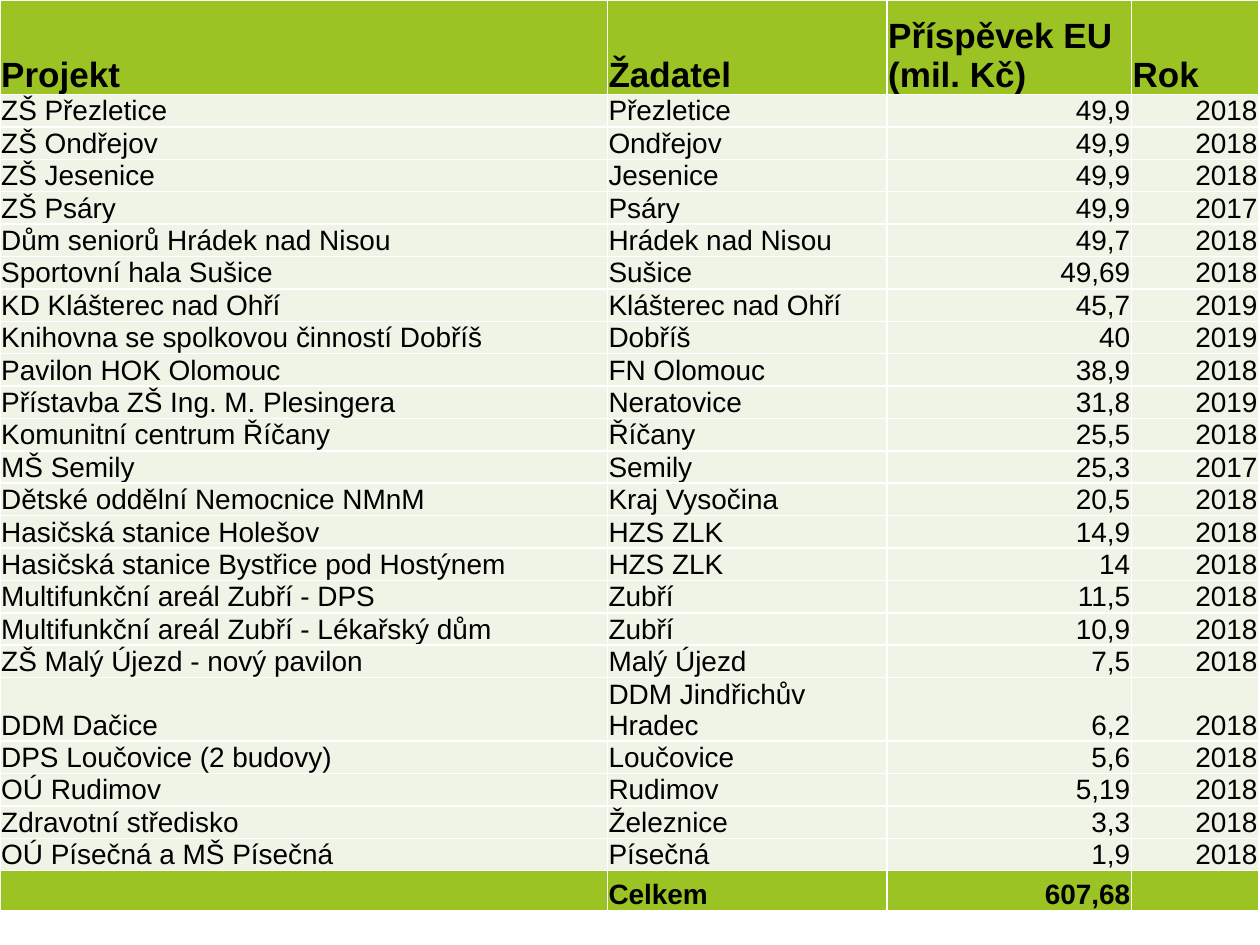
from dataclasses import dataclass

from lxml import etree
from pptx import Presentation
from pptx import util as u
from pptx.dml.color import RGBColor
from pptx.enum import text
from pptx.oxml import ns


@dataclass(frozen=True)
class Theme:
    font: str = "Arial"
    ink: str = "000000"
    green: str = "9BC323"
    pale: str = "EFF4E7"
    rule: str = "FFFFFF"
    head: int = 20
    body: int = 16
    line: int = 1
    inset: float = 0.01


THEME = Theme()
COLS = (0.482, 0.222, 0.194, 0.101)
HEAD, ROW, TOTAL = 0.1, 0.23 / 7.5, 0.22 / 7.5

ROWS = [
    ("Projekt", "Žadatel", "Příspěvek EU (mil. Kč)", "Rok"),
    ("ZŠ Přezletice", "Přezletice", "49,9", "2018"),
    ("ZŠ Ondřejov", "Ondřejov", "49,9", "2018"),
    ("ZŠ Jesenice", "Jesenice", "49,9", "2018"),
    ("ZŠ Psáry", "Psáry", "49,9", "2017"),
    ("Dům seniorů Hrádek nad Nisou", "Hrádek nad Nisou", "49,7", "2018"),
    ("Sportovní hala Sušice", "Sušice", "49,69", "2018"),
    ("KD Klášterec nad Ohří", "Klášterec nad Ohří", "45,7", "2019"),
    ("Knihovna se spolkovou činností Dobříš", "Dobříš", "40", "2019"),
    ("Pavilon HOK Olomouc", "FN Olomouc", "38,9", "2018"),
    ("Přístavba ZŠ Ing. M. Plesingera", "Neratovice", "31,8", "2019"),
    ("Komunitní centrum Říčany", "Říčany", "25,5", "2018"),
    ("MŠ Semily", "Semily", "25,3", "2017"),
    ("Dětské oddělní Nemocnice NMnM", "Kraj Vysočina", "20,5", "2018"),
    ("Hasičská stanice Holešov", "HZS ZLK", "14,9", "2018"),
    ("Hasičská stanice Bystřice pod Hostýnem", "HZS ZLK", "14", "2018"),
    ("Multifunkční areál Zubří - DPS", "Zubří", "11,5", "2018"),
    ("Multifunkční areál Zubří - Lékařský dům", "Zubří", "10,9", "2018"),
    ("ZŠ Malý Újezd - nový pavilon", "Malý Újezd", "7,5", "2018"),
    ("DDM Dačice", "DDM Jindřichův Hradec", "6,2", "2018"),
    ("DPS Loučovice (2 budovy)", "Loučovice", "5,6", "2018"),
    ("OÚ Rudimov", "Rudimov", "5,19", "2018"),
    ("Zdravotní středisko", "Železnice", "3,3", "2018"),
    ("OÚ Písečná a MŠ Písečná", "Písečná", "1,9", "2018"),
    ("", "Celkem", "607,68", ""),
]


def edge(cell):
    """Rule all four sides of a cell."""
    props = cell._tc.get_or_add_tcPr()
    for i, side in enumerate(("lnL", "lnR", "lnT", "lnB")):
        line = etree.Element(ns.qn(f"a:{side}"), w=str(u.Pt(THEME.line)))
        fill = etree.SubElement(line, ns.qn("a:solidFill"))
        etree.SubElement(fill, ns.qn("a:srgbClr"), val=THEME.rule)
        props.insert(i, line)


def style(cell, words, size, bold, fill, right):
    cell.fill.solid()
    cell.fill.fore_color.rgb = RGBColor.from_string(fill)
    edge(cell)
    cell.margin_left = cell.margin_right = cell.margin_top = u.Inches(THEME.inset)
    cell.margin_bottom = 0
    cell.vertical_anchor = text.MSO_ANCHOR.BOTTOM
    if not words:
        return
    cell.text_frame.text = words
    para = cell.text_frame.paragraphs[0]
    para.alignment = text.PP_ALIGN.RIGHT if right else text.PP_ALIGN.LEFT
    font = para.runs[0].font
    font.name, font.size, font.bold = THEME.font, u.Pt(size), bold
    font.color.rgb = RGBColor.from_string(THEME.ink)


def grants(slide, left, top, width, height):
    """Place the table of projects in the given box."""
    last = len(ROWS) - 1
    table = slide.shapes.add_table(
        len(ROWS), len(COLS), left, top, width, height).table
    table.first_row = table.horz_banding = False
    for col, share in zip(table.columns, COLS):
        col.width = int(width * share)
    for r, row in enumerate(ROWS):
        share = HEAD if r == 0 else TOTAL if r == last else ROW
        table.rows[r].height = int(height * share)
        strong = r in (0, last)
        for c, words in enumerate(row):
            style(table.cell(r, c), words,
                  size=THEME.body if r else THEME.head,
                  bold=strong,
                  fill=THEME.green if strong else THEME.pale,
                  right=r > 0 and c > 1)


def main():
    deck = Presentation()
    deck.slide_width, deck.slide_height = u.Inches(10), u.Inches(7.5)
    slide = deck.slides.add_slide(deck.slide_layouts[6])
    grants(slide, 0, 0, deck.slide_width, deck.slide_height)
    deck.save("out.pptx")


if __name__ == "__main__":
    main()
